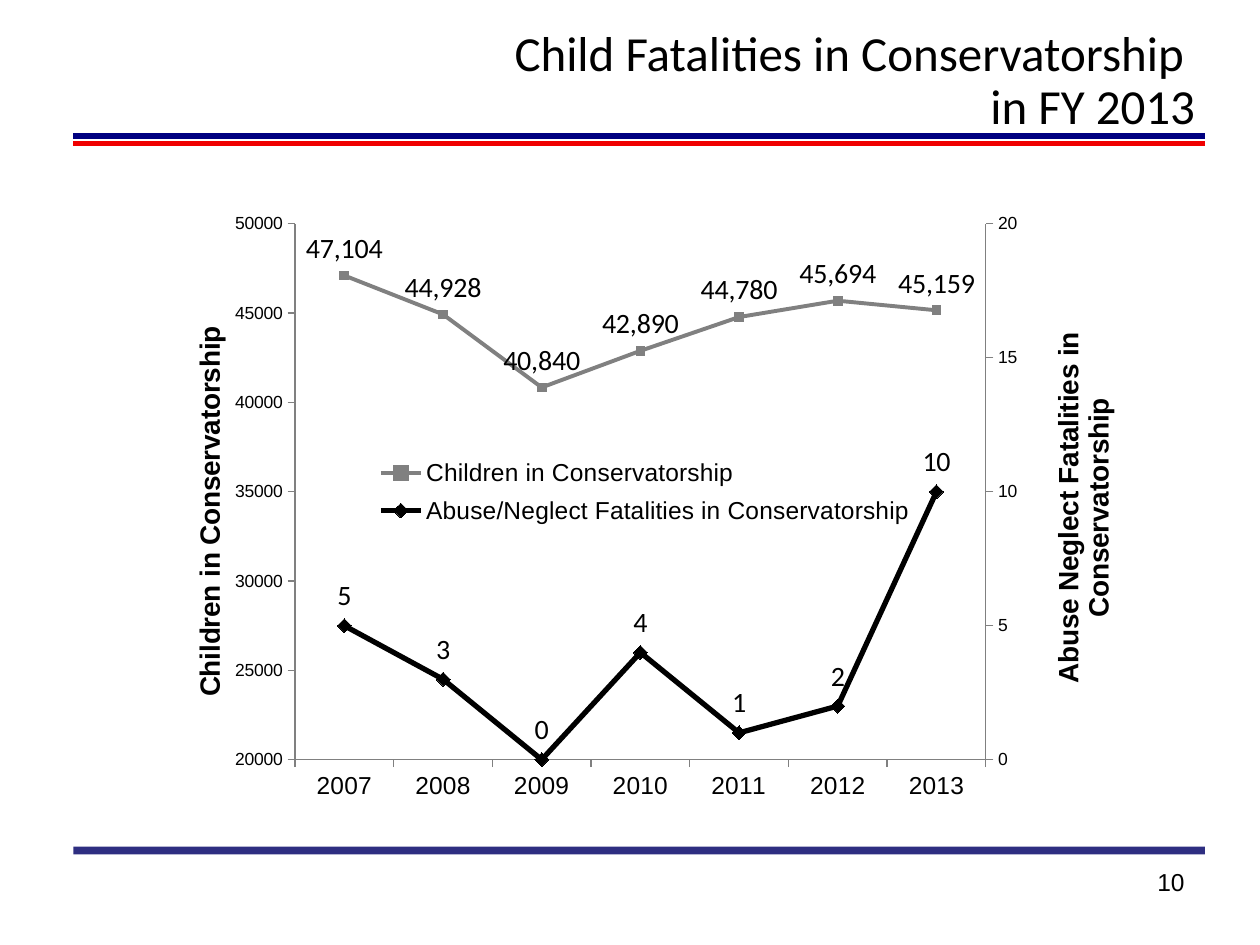
from copy import deepcopy
from dataclasses import dataclass

from lxml.etree import SubElement
from pptx import Presentation
from pptx.chart.axis import ValueAxis
from pptx.chart.data import CategoryChartData
from pptx.dml.color import RGBColor
from pptx.enum.chart import XL_CHART_TYPE as ChartType
from pptx.enum.chart import XL_LABEL_POSITION as LabelPosition
from pptx.enum.chart import XL_LEGEND_POSITION as LegendPosition
from pptx.enum.chart import XL_MARKER_STYLE as Marker
from pptx.enum.chart import XL_TICK_MARK as TickMark
from pptx.enum.shapes import MSO_CONNECTOR as Connector
from pptx.enum.text import MSO_ANCHOR as Anchor
from pptx.enum.text import MSO_AUTO_SIZE as AutoSize
from pptx.enum.text import PP_ALIGN as Align
from pptx.oxml import parse_xml
from pptx.oxml.ns import nsdecls, qn
from pptx.util import Pt


@dataclass(frozen=True)
class Theme:
    black: RGBColor = RGBColor(0, 0, 0)
    grey: RGBColor = RGBColor(0x80, 0x80, 0x80)
    navy: RGBColor = RGBColor(0, 0, 0x80)
    red: RGBColor = RGBColor(0xF0, 0, 0)
    footer: RGBColor = RGBColor(0, 0, 0x66)
    heading_font: str = "Calibri"
    body_font: str = "Arial"
    title_size: int = 28
    label_size: int = 16
    text_size: int = 14
    tick_size: int = 10


THEME = Theme()
YEARS = [str(year) for year in range(2007, 2014)]
CHILDREN = [47104, 44928, 40840, 42890, 44780, 45694, 45159]
FATALITIES = [5, 3, 0, 4, 1, 2, 10]


def set_all(target, **values):
    """Set every given attribute on the target."""
    for name, value in values.items():
        setattr(target, name, value)


def style_font(font, size, name=THEME.body_font, bold=False):
    """Give a font its face, size and black colour."""
    set_all(font, name=name, size=Pt(size), bold=bold)
    font.color.rgb = THEME.black


def add_rule(page, top, color, width, opacity=100):
    """Draw a horizontal rule across the page."""
    rule = page.shapes.add_connector(Connector.STRAIGHT, Pt(42), Pt(top), Pt(688.5), Pt(top))
    rule.line.width = Pt(width)
    rule.line.color.rgb = color
    if opacity < 100:
        fill = rule.line.fill._xPr.find(".//" + qn("a:srgbClr"))
        SubElement(fill, qn("a:alpha"), val=str(opacity * 1000))
    SubElement(rule._element.spPr, qn("a:effectLst"))


def write_text(box, text, size, font, anchor):
    """Write one right-aligned paragraph into a box."""
    frame = box.text_frame
    set_all(frame, text=text, word_wrap=True, auto_size=AutoSize.NONE, vertical_anchor=anchor)
    para = frame.paragraphs[0]
    para.alignment = Align.RIGHT
    for span in para.runs:
        style_font(span.font, size, font)
    return para


def add_title(page, text):
    """Place and fill the title placeholder."""
    title = page.shapes.title
    set_all(title, left=Pt(180), top=Pt(21.6), width=Pt(510), height=Pt(50.4))
    para = write_text(title, text, THEME.title_size, THEME.heading_font, Anchor.MIDDLE)
    para.line_spacing = 0.9


def add_page_number(page, text):
    """Add the page number at the lower right."""
    box = page.shapes.add_textbox(Pt(516), Pt(492), Pt(168), Pt(37.5))
    write_text(box, text, THEME.text_size, THEME.body_font, Anchor.TOP)


def place_part(part, index, target=None, **place):
    """Give a chart part a manual layout, as shares of the chart."""
    for old in part.findall(qn("c:layout")):
        part.remove(old)
    layout = parse_xml(f"<c:layout {nsdecls('c')}><c:manualLayout/></c:layout>")
    settings = {"layoutTarget": target} if target else {}
    settings |= {"xMode": "edge", "yMode": "edge"}
    settings |= {key: str(value) for key, value in place.items()}
    for name, value in settings.items():
        SubElement(layout[0], qn(f"c:{name}"), val=value)
    part.insert(index, layout)


def style_axis(axis, size):
    """Format tick labels, ticks and line of an axis."""
    set_all(axis, has_major_gridlines=False, major_tick_mark=TickMark.OUTSIDE,
            minor_tick_mark=TickMark.NONE)
    style_font(axis.tick_labels.font, size)
    axis.format.line.color.rgb = THEME.grey
    axis.format.line.width = Pt(0.75)


def title_axis(axis, text, x, y):
    """Add a bold title that reads upwards."""
    frame = axis.axis_title.text_frame
    frame.text = text
    style_font(frame.paragraphs[0].runs[0].font, THEME.label_size, bold=True)
    body = frame._txBody.bodyPr
    body.set("rot", "-5400000")
    body.set("vert", "horz")
    place_part(axis.axis_title._element, 1, x=x, y=y)


def style_series(series, color, width, marker, size):
    """Format the line, markers and value labels of a series."""
    series.smooth = False
    series.format.line.color.rgb = color
    series.format.line.width = Pt(width)
    set_all(series.marker, style=marker, size=size)
    series.marker.format.fill.solid()
    series.marker.format.fill.fore_color.rgb = color
    series.marker.format.line.color.rgb = color
    labels = series.data_labels
    set_all(labels, show_value=True, position=LabelPosition.ABOVE,
            number_format="#,##0", number_format_is_linked=False)
    style_font(labels.font, THEME.label_size, THEME.heading_font)


def set_values(element, **values):
    """Set the val attribute of named chart children."""
    for name, value in values.items():
        element.find(qn(f"c:{name}")).set("val", value)


def split_to_right_axis(chart):
    """Move the last series to a second plot and return its value axis."""
    area = chart._chartSpace.chart.plotArea
    first = area.find(qn("c:lineChart"))
    second = deepcopy(first)
    first.remove(first.findall(qn("c:ser"))[-1])
    second.remove(second.find(qn("c:ser")))
    for axis_id, value in zip(second.findall(qn("c:axId")), ("5001", "5002")):
        axis_id.set("val", value)
    first.addnext(second)
    categories = deepcopy(area.find(qn("c:catAx")))
    values = deepcopy(area.find(qn("c:valAx")))
    set_values(categories, axId="5001", crossAx="5002", delete="1")
    set_values(values, axId="5002", crossAx="5001", axPos="r", crosses="max")
    last_axis = area.find(qn("c:valAx"))
    last_axis.addnext(values)
    values.addnext(categories)
    return ValueAxis(values)


def add_chart(page):
    """Add the line chart with a value axis on each side."""
    data = CategoryChartData()
    data.categories = YEARS
    data.add_series("Children in Conservatorship", CHILDREN)
    data.add_series("Abuse/Neglect Fatalities in Conservatorship", FATALITIES)
    chart = page.shapes.add_chart(
        ChartType.LINE_MARKERS, Pt(84), Pt(114), Pt(564), Pt(348), data).chart
    style_font(chart.font, THEME.tick_size)
    set_all(chart, has_title=False, has_legend=True)
    set_all(chart.legend, position=LegendPosition.RIGHT, include_in_layout=True)
    style_font(chart.legend.font, THEME.text_size)
    style_axis(chart.category_axis, THEME.text_size)
    left = chart.value_axis
    style_axis(left, THEME.tick_size)
    right = split_to_right_axis(chart)
    set_all(left, minimum_scale=20000, maximum_scale=50000, major_unit=5000)
    set_all(right, minimum_scale=0, maximum_scale=20, major_unit=5)
    title_axis(left, "Children in Conservatorship", 0.04, 0.2)
    title_axis(right, "Abuse Neglect Fatalities in Conservatorship", 0.91, 0.21)
    children, fatalities = (plot.series[0] for plot in chart.plots)
    style_series(children, THEME.grey, 2.25, Marker.SQUARE, 5)
    style_series(fatalities, THEME.black, 3, Marker.DIAMOND, 8)
    place_part(chart._chartSpace.chart.plotArea, 0, "inner", x=0.15, y=0.04, w=0.7, h=0.88)
    place_part(chart.legend._element, 1, x=0.23, y=0.41, w=0.55, h=0.14)


def main():
    """Build the slide and save it."""
    deck = Presentation()
    set_all(deck, slide_width=Pt(720), slide_height=Pt(540))
    page = deck.slides.add_slide(deck.slide_layouts[5])
    add_rule(page, 77.8, THEME.navy, 3)
    add_rule(page, 82.1, THEME.red, 3)
    add_rule(page, 486, THEME.footer, 4.5, opacity=82)
    add_title(page, "Child Fatalities in Conservatorship \vin FY 2013")
    add_page_number(page, "10")
    add_chart(page)
    deck.save("out.pptx")


if __name__ == "__main__":
    main()
